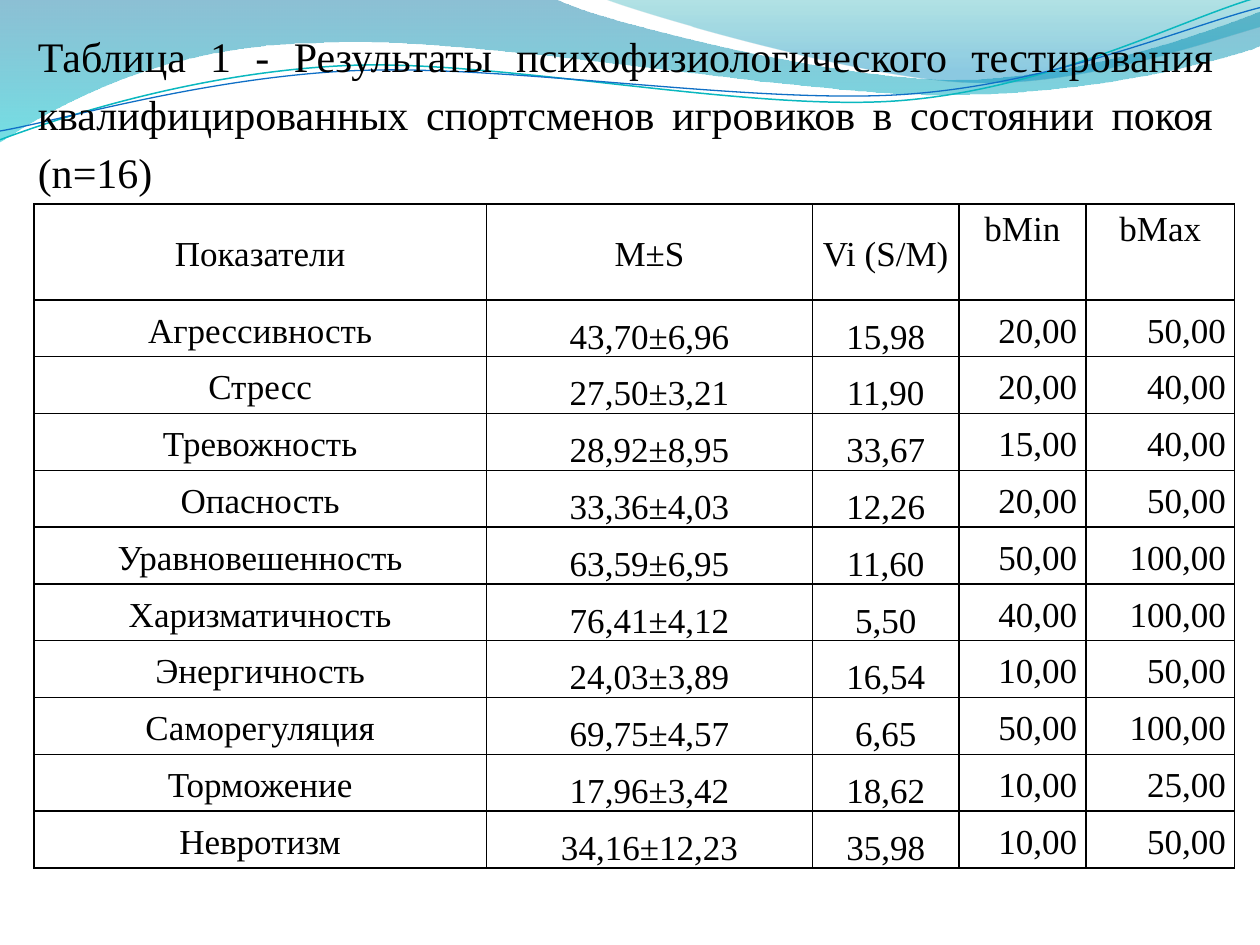
import math
import pptx
import pptx.dml.color
import pptx.enum.text
import pptx.oxml
import pptx.oxml.ns
import pptx.util
from pptx.util import Inches

PP_ALIGN = pptx.enum.text.PP_ALIGN
ANCHOR = pptx.enum.text.MSO_ANCHOR
FONT = "Times New Roman"
COLORS = {
    "text": "000000", "border": "000000", "cell": "FFFFFF",
    "deep_blue": "0074A1", "cyan": "00C6CF", "teal": "00A1A9", "sky": "008BBF",
    "teal_line": "0AB8BF", "blue_line": "0F6FC6",
}
TITLE = ("Таблица 1 - Результаты психофизиологического тестирования "
         "квалифицированных спортсменов игровиков в состоянии покоя (n=16)")
ROWS = [
    ("Показатели", "M±S", "Vi (S/M)", "bMin", "bMax"),
    ("Агрессивность", "43,70±6,96", "15,98", "20,00", "50,00"),
    ("Стресс", "27,50±3,21", "11,90", "20,00", "40,00"),
    ("Тревожность", "28,92±8,95", "33,67", "15,00", "40,00"),
    ("Опасность", "33,36±4,03", "12,26", "20,00", "50,00"),
    ("Уравновешенность", "63,59±6,95", "11,60", "50,00", "100,00"),
    ("Харизматичность", "76,41±4,12", "5,50", "40,00", "100,00"),
    ("Энергичность", "24,03±3,89", "16,54", "10,00", "50,00"),
    ("Саморегуляция", "69,75±4,57", "6,65", "50,00", "100,00"),
    ("Торможение", "17,96±3,42", "18,62", "10,00", "25,00"),
    ("Невротизм", "34,16±12,23", "35,98", "10,00", "50,00"),
]
COL_WIDTHS = [3.59, 2.59, 1.16, 1.01, 1.18]
TABLE_HEIGHT, HEADER_HEIGHT = 5.27, 0.76
ROW_HEIGHT = (TABLE_HEIGHT - HEADER_HEIGHT) / (len(ROWS) - 1)

# Wave outlines: a pair is a straight step, six numbers are a Bezier curve
LEFT_WAVE = [
    (0, -0.01), (4.4, -0.01), (4.76, 0.17, 6.64, 0.63, 7.58, 0.63),
    (8.53, 0.63, 9.58, 0.26, 10, 0.09), (10.01, 0.36),
    (9.83, 0.44, 8.7, 0.76, 7.46, 0.75), (6.22, 0.75, 3.82, 0.28, 2.57, 0.34),
    (1.29, 0.35, 0.46, 0.83, -0.01, 1.13), (0, -0.01),
]
RIGHT_WAVE = [
    (4.79, -0.01), (5.09, 0.11, 6.82, 0.62, 7.69, 0.65),
    (8.56, 0.69, 9.61, 0.32, 10, 0.21), (10, 0), (4.79, -0.01),
]
TEAL_CURVE = [
    (0, 1.11), (0.48, 0.93, 1.58, 0.57, 2.77, 0.52),
    (3.95, 0.47, 5.93, 0.89, 7.13, 0.8), (8.33, 0.71, 9.38, 0.15, 9.98, -0.02),
]
BLUE_CURVE = [
    (0, 1.04), (0.47, 0.96, 1.64, 0.61, 2.83, 0.56),
    (4.03, 0.51, 5.97, 0.83, 7.17, 0.75), (8.36, 0.67, 9.41, 0.21, 10, 0.06),
]
CURVE_TILT = -2.7


def rgb(name):
    return pptx.dml.color.RGBColor.from_string(COLORS[name])


def parse(xml):
    """Parse a drawing element whose tag ends the first word."""
    tag, rest = xml[1:].split(" ", 1)
    return pptx.oxml.parse_xml(f'<{tag} {pptx.oxml.ns.nsdecls("a")} {rest}')


def add_outline(s, outline, box, close, tilt=0):
    """Freeform with Bezier steps in a box, tilted about the box centre."""
    left, top, width, height = box
    cos, sin = math.cos(math.radians(tilt)), math.sin(math.radians(tilt))

    def point(x, y):
        dx, dy = x - left - width / 2, y - top - height / 2
        px = Inches(dx * cos + dy * sin + width / 2)
        py = Inches(dy * cos - dx * sin + height / 2)
        return f'<a:pt x="{px}" y="{py}"/>'

    ends = [(Inches(part[-2]), Inches(part[-1])) for part in outline]
    builder = s.shapes.build_freeform(*ends[0])
    builder.add_line_segments(ends[1:], close=False)
    sp = builder.convert_to_shape()
    sp.left, sp.top, sp.width, sp.height = map(Inches, box)
    sp.rotation = tilt
    sp.shadow.inherit = False

    steps = ""
    for i, part in enumerate(outline):
        tag = "moveTo" if i == 0 else "lnTo" if len(part) == 2 else "cubicBezTo"
        pairs = zip(part[::2], part[1::2])
        steps += f"<a:{tag}>{''.join(point(x, y) for x, y in pairs)}</a:{tag}>"
    steps += "<a:close/>" if close else ""
    old = next(sp._element.spPr.iter(pptx.oxml.ns.qn("a:path")))
    old.getparent().replace(old, parse(
        f'<a:path w="{Inches(width)}" h="{Inches(height)}">{steps}</a:path>'))
    return sp


def add_wave(s, outline, box, stops):
    """Filled wave; stops are (position, colour, opacity in percent)."""
    sp = add_outline(s, outline, box, True)
    sp.line.fill.background()
    sp.fill.gradient()
    sp.fill.gradient_angle = 270
    for stop, (position, color, _) in zip(sp.fill.gradient_stops, stops):
        stop.position = position
        stop.color.rgb = rgb(color)
    fill_colors = list(sp._element.spPr.iter(pptx.oxml.ns.qn("a:srgbClr")))
    for clr, (_, _, opacity) in zip(fill_colors, stops):
        for child in list(clr):
            clr.remove(child)
        clr.append(parse(f'<a:alpha val="{opacity * 1000}"/>'))


def add_curve(s, outline, box, color, width):
    sp = add_outline(s, outline, box, False, CURVE_TILT)
    sp.fill.background()
    sp.line.color.rgb = rgb(color)
    sp.line.width = pptx.util.Pt(width)


def format_text(p, size, align):
    p.alignment = align
    p.line_spacing = 1.15
    for r in p.runs:
        r.font.name = FONT
        r.font.size = pptx.util.Pt(size)
        r.font.color.rgb = rgb("text")


def set_title(s):
    sp = s.shapes.title
    sp.left, sp.top, sp.width, sp.height = map(Inches, (0.2, 0.13, 9.53, 4.32))
    tf = sp.text_frame
    tf.text = TITLE
    tf.word_wrap = True
    tf.vertical_anchor = ANCHOR.TOP
    tf.auto_size = pptx.enum.text.MSO_AUTO_SIZE.SHAPE_TO_FIT_TEXT
    format_text(tf.paragraphs[0], 24, PP_ALIGN.JUSTIFY)
    # Bring the title in front of the waves
    s.shapes._spTree.append(sp._element)


def add_borders(cell):
    tc_pr = cell._tc.get_or_add_tcPr()
    for i, side in enumerate(("lnL", "lnR", "lnT", "lnB")):
        tc_pr.insert(i, parse(
            f'<a:{side} w="12700"><a:solidFill>'
            f'<a:srgbClr val="{COLORS["border"]}"/></a:solidFill></a:{side}>'))


def fill_cell(cell, text, row, col):
    cell.margin_left = cell.margin_right = Inches(0.07)
    cell.margin_top = cell.margin_bottom = 0
    is_range = col >= 3
    if row == 0:
        cell.vertical_anchor = ANCHOR.TOP if is_range else ANCHOR.MIDDLE
    else:
        cell.vertical_anchor = ANCHOR.BOTTOM if col in (1, 2) else ANCHOR.MIDDLE
    if row == 0 or col == 0:
        cell.fill.solid()
        cell.fill.fore_color.rgb = rgb("cell")
    else:
        cell.fill.background()
    add_borders(cell)
    cell.text_frame.text = text
    align = PP_ALIGN.RIGHT if row and is_range else PP_ALIGN.CENTER
    format_text(cell.text_frame.paragraphs[0], 20, align)


def add_results_table(s):
    table = s.shapes.add_table(
        len(ROWS), len(COL_WIDTHS), Inches(0.27), Inches(1.62),
        Inches(sum(COL_WIDTHS)), Inches(TABLE_HEIGHT)).table
    table.first_row = table.horz_banding = False
    for column, width in zip(table.columns, COL_WIDTHS):
        column.width = Inches(width)
    for i, values in enumerate(ROWS):
        table.rows[i].height = Inches(ROW_HEIGHT if i else HEADER_HEIGHT)
        for j, text in enumerate(values):
            fill_cell(table.cell(i, j), text, i, j)


def main():
    prs = pptx.Presentation()
    prs.slide_width, prs.slide_height = Inches(10), Inches(7.5)
    s = prs.slides.add_slide(prs.slide_layouts[5])
    # Wave decoration
    add_wave(s, LEFT_WAVE, (-0.01, -0.01, 10.02, 1.14),
             [(0, "deep_blue", 45), (1, "cyan", 55)])
    add_wave(s, RIGHT_WAVE, (4.79, -0.01, 5.21, 0.7),
             [(0, "teal", 30), (0.8, "sky", 45)])
    add_curve(s, TEAL_CURVE, (-0.02, 0.22, 10.02, 0.71), "teal_line", 0.85)
    add_curve(s, BLUE_CURVE, (-0.02, 0.3, 10.03, 0.58), "blue_line", 0.75)
    # Content
    set_title(s)
    add_results_table(s)
    prs.save("out.pptx")


if __name__ == "__main__":
    main()
